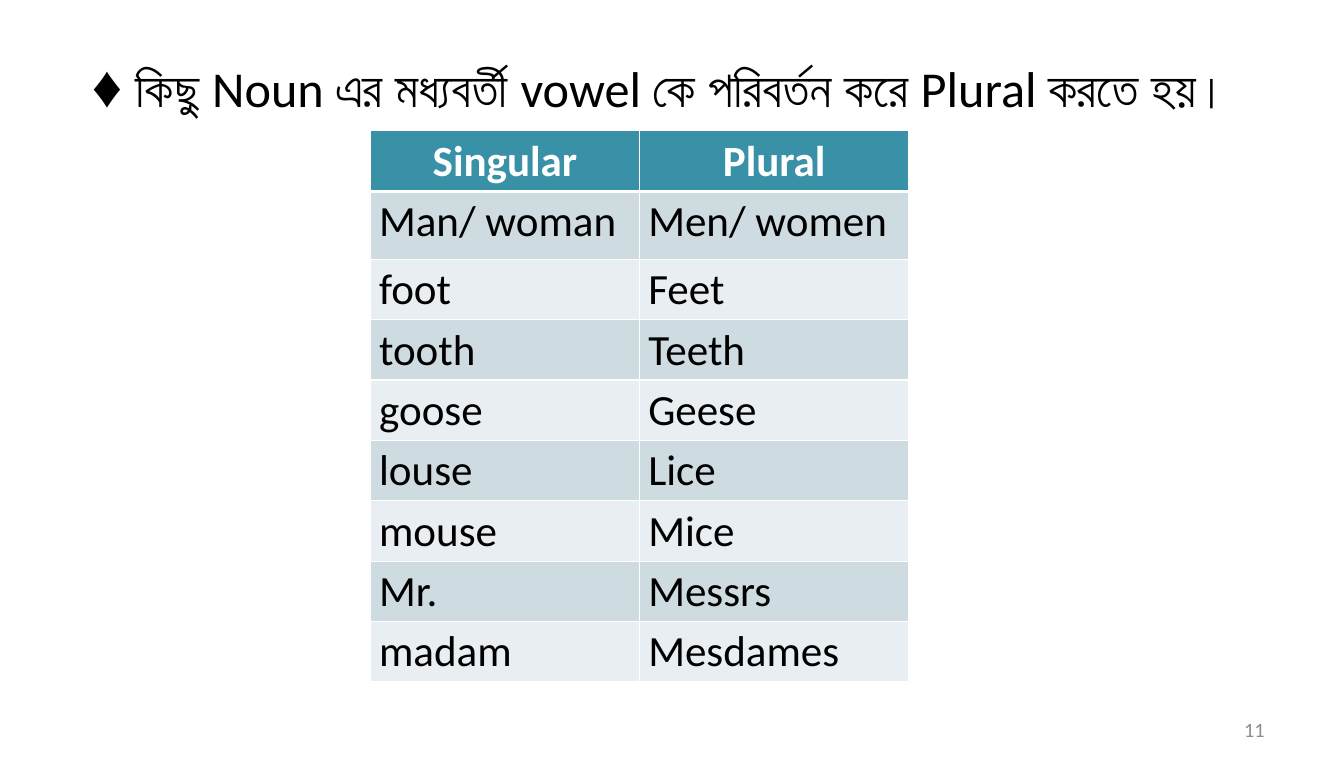
from lxml.etree import SubElement
from pptx import Presentation
from pptx.dml.color import RGBColor
from pptx.enum.text import MSO_ANCHOR, PP_ALIGN
from pptx.oxml.ns import qn
from pptx.util import Inches, Pt

BLACK = RGBColor(0x00, 0x00, 0x00)
WHITE = RGBColor(0xFF, 0xFF, 0xFF)
TEAL = RGBColor(0x38, 0x91, 0xA7)
BAND_DARK = RGBColor(0xCE, 0xDC, 0xE1)
BAND_LIGHT = RGBColor(0xE8, 0xEE, 0xF1)
GRAY = RGBColor(0x8C, 0x8C, 0x8C)

BODY_FONT = "Calibri"
BULLET_FONT = "League Spartan"

NOUNS = [
    ("Singular", "Plural"),
    ("Man/ woman", "Men/ women"),
    ("foot", "Feet"),
    ("tooth", "Teeth"),
    ("goose", "Geese"),
    ("louse", "Lice"),
    ("mouse", "Mice"),
    ("Mr.", "Messrs"),
    ("madam", "Mesdames"),
]


def format_run(run, size, color, font=BODY_FONT, bold=False):
    run.font.size = Pt(size)
    run.font.color.rgb = color
    run.font.name = font
    run.font.bold = bold


def add_text_frame(slide, left, top, width, height):
    box = slide.shapes.add_textbox(Inches(left), Inches(top), Inches(width), Inches(height))
    box.text_frame.word_wrap = True
    return box.text_frame


def add_rule(slide, left, top, width, height):
    """Heading that states the grammar rule."""
    paragraph = add_text_frame(slide, left, top, width, height).paragraphs[0]
    paragraph.alignment = PP_ALIGN.CENTER
    for text, font in (
        ("♦ ", BULLET_FONT),
        ("কিছু Noun এর মধ্যবর্তী vowel কে পরিবর্তন করে Plural করতে হয়।", BODY_FONT),
    ):
        run = paragraph.add_run()
        run.text = text
        format_run(run, 42, BLACK, font)


def set_borders(cell, bottom_width):
    """White border on every side; borders must precede the fill."""
    properties = cell._tc.get_or_add_tcPr()
    for side, width in (("L", 1), ("R", 1), ("T", 1), ("B", bottom_width)):
        line = SubElement(properties, qn(f"a:ln{side}"), w=str(Pt(width)))
        fill = SubElement(line, qn("a:solidFill"))
        SubElement(fill, qn("a:srgbClr"), val=str(WHITE))


def add_noun_table(slide, left, top, width, row_height, first_row_height):
    """Two equal columns, a header row and banded rows."""
    height = row_height * (len(NOUNS) - 1) + first_row_height
    table = slide.shapes.add_table(
        len(NOUNS), 2, Inches(left), Inches(top), Inches(width), Inches(height)
    ).table
    for row_index, words in enumerate(NOUNS):
        is_header = row_index == 0
        table.rows[row_index].height = Inches(first_row_height if row_index == 1 else row_height)
        band = BAND_DARK if row_index % 2 else BAND_LIGHT
        for column_index, word in enumerate(words):
            cell = table.cell(row_index, column_index)
            set_borders(cell, 3 if is_header else 1)
            cell.fill.solid()
            cell.fill.fore_color.rgb = TEAL if is_header else band
            cell.text_frame.text = word
            paragraph = cell.text_frame.paragraphs[0]
            paragraph.alignment = PP_ALIGN.CENTER if is_header else PP_ALIGN.LEFT
            format_run(paragraph.runs[0], 36, WHITE if is_header else BLACK, bold=is_header)


def add_slide_number(slide, left, top, width, height):
    text_frame = add_text_frame(slide, left, top, width, height)
    text_frame.margin_left = text_frame.margin_right = Inches(0.14)
    text_frame.margin_top = text_frame.margin_bottom = Inches(0.07)
    text_frame.vertical_anchor = MSO_ANCHOR.MIDDLE
    text_frame.text = "11"
    paragraph = text_frame.paragraphs[0]
    paragraph.alignment = PP_ALIGN.RIGHT
    format_run(paragraph.runs[0], 17, GRAY)


def main():
    presentation = Presentation()
    presentation.slide_width = Inches(15.6)
    presentation.slide_height = Inches(8.88)
    slide = presentation.slides.add_slide(presentation.slide_layouts[6])
    add_rule(slide, 0.3, 0.61, 14.75, 0.81)
    add_noun_table(slide, 4.3, 1.52, 6.25, 0.7, 0.79)
    add_slide_number(slide, 11.18, 8.23, 3.64, 0.47)
    presentation.save("out.pptx")


if __name__ == "__main__":
    main()
